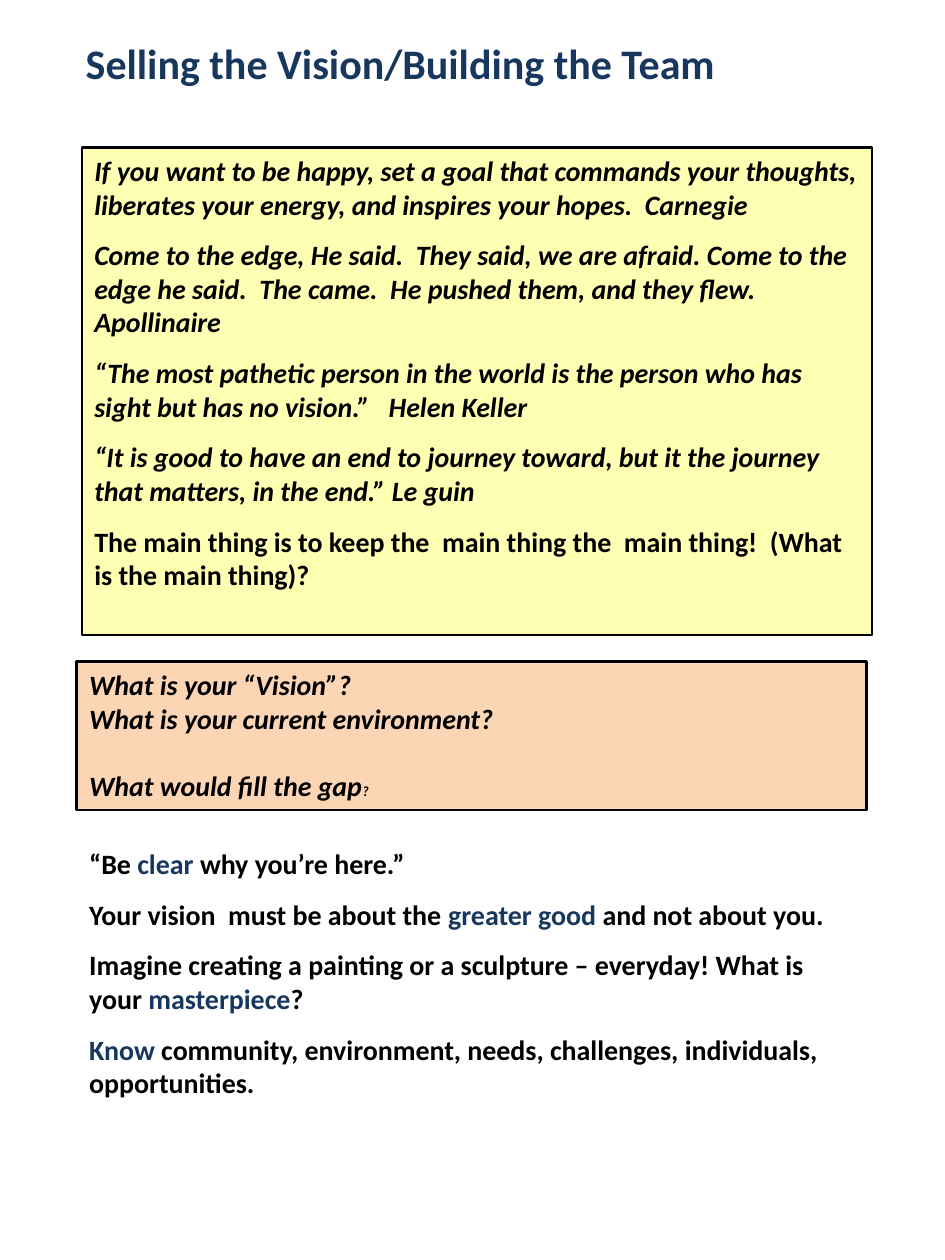
from dataclasses import dataclass

from pptx import Presentation
from pptx.dml.color import RGBColor
from pptx.enum.shapes import MSO_SHAPE
from pptx.enum.text import MSO_ANCHOR, MSO_AUTO_SIZE, PP_ALIGN
from pptx.util import Inches, Pt

RECTANGLE = MSO_SHAPE.RECTANGLE
TOP = MSO_ANCHOR.TOP
LEFT = PP_ALIGN.LEFT
NO_FIT = MSO_AUTO_SIZE.NONE


@dataclass(frozen=True)
class Theme:
    font: str = "Calibri"
    ink: str = "000000"
    accent: str = "17375E"
    quote_fill: str = "FFFFB3"
    question_fill: str = "FCD5B5"
    title_size: float = 24
    body_size: float = 16
    small_size: float = 8
    outline: float = 1.5
    gap: float = 9.75
    line_gap: float = 19.5


THEME = Theme()
PAGE_SIZE = (7.5, 10)

PLAIN = {}
ITALIC = {"italic": True}
ACCENT = {"color": THEME.accent}
HEADING = {"color": THEME.accent, "size": THEME.title_size}
SMALL = {"italic": True, "size": THEME.small_size}

TITLE = [[("Selling the Vision/Building the Team", HEADING)]]

QUOTES = [
    [("If you want to be happy, set a goal that commands your thoughts, liberates your energy, "
      "and inspires your hopes.  Carnegie", ITALIC)],
    [("Come to the edge, He said.  They said, we are afraid. Come to the edge he said.  "
      "The came.  He pushed them, and they flew.   Apollinaire", ITALIC)],
    [("“The most pathetic person in the world is the person who has sight but has no vision.”   "
      "Helen Keller", ITALIC)],
    [("“It is good to have an end to journey toward, but it the journey that matters, "
      "in the end.” Le guin", ITALIC)],
    [("The main thing is to keep the  main thing the  main thing!  "
      "(What is the main thing)?", PLAIN)],
]

QUESTIONS = [
    [("What is your “Vision”?", ITALIC)],
    [("What is your current environment?", ITALIC)],
    [("What would fill the gap", ITALIC), ("?", SMALL)],
]

ADVICE = [
    [("“Be ", PLAIN), ("clear ", ACCENT), ("why you’re here.”", PLAIN)],
    [("Your vision  must be about the ", PLAIN), ("greater good ", ACCENT),
     ("and not about you.", PLAIN)],
    [("Imagine creating a painting or a sculpture – everyday! What is your ", PLAIN),
     ("masterpiece", ACCENT), ("?", PLAIN)],
    [("Know", ACCENT),
     (" community, environment, needs, challenges, individuals, opportunities.", PLAIN)],
]

TITLE_AREA = (0.58, 0.25, 5.3, 0.5)
QUOTE_AREA = (0.65, 1.17, 6.27, 3.87)
QUESTION_AREA = (0.61, 5.25, 6.27, 1.18)
ADVICE_AREA = (0.61, 6.67, 6.23, 2.12)


def inches(values):
    return [Inches(value) for value in values]


def write(box, paragraphs, gaps):
    frame = box.text_frame
    frame.word_wrap = True
    frame.auto_size = NO_FIT
    frame.vertical_anchor = TOP
    for index, (runs, gap) in enumerate(zip(paragraphs, gaps)):
        para = frame.add_paragraph() if index else frame.paragraphs[0]
        para.alignment = LEFT
        para.space_before = Pt(gap)
        for text, style in runs:
            span = para.add_run()
            span.text = text
            span.font.name = THEME.font
            span.font.bold = True
            span.font.italic = style.get("italic", False)
            span.font.size = Pt(style.get("size", THEME.body_size))
            span.font.color.rgb = RGBColor.from_string(style.get("color", THEME.ink))


def even_gaps(paragraphs):
    return [0] + [THEME.gap] * (len(paragraphs) - 1)


def add_panel(page, area, fill):
    panel = page.shapes.add_shape(RECTANGLE, *inches(area))
    panel.shadow.inherit = False
    panel.fill.solid()
    panel.fill.fore_color.rgb = RGBColor.from_string(fill)
    panel.line.color.rgb = RGBColor.from_string(THEME.ink)
    panel.line.width = Pt(THEME.outline)
    return panel


def main():
    deck = Presentation()
    deck.slide_width, deck.slide_height = inches(PAGE_SIZE)
    page = deck.slides.add_slide(deck.slide_layouts[5])

    title = page.shapes.title
    title.left, title.top, title.width, title.height = inches(TITLE_AREA)
    write(title, TITLE, [0])

    write(add_panel(page, QUOTE_AREA, THEME.quote_fill), QUOTES, even_gaps(QUOTES))
    write(add_panel(page, QUESTION_AREA, THEME.question_fill), QUESTIONS, [0, 0, THEME.line_gap])
    write(page.shapes.add_textbox(*inches(ADVICE_AREA)), ADVICE, even_gaps(ADVICE))

    deck.save("out.pptx")


if __name__ == "__main__":
    main()
